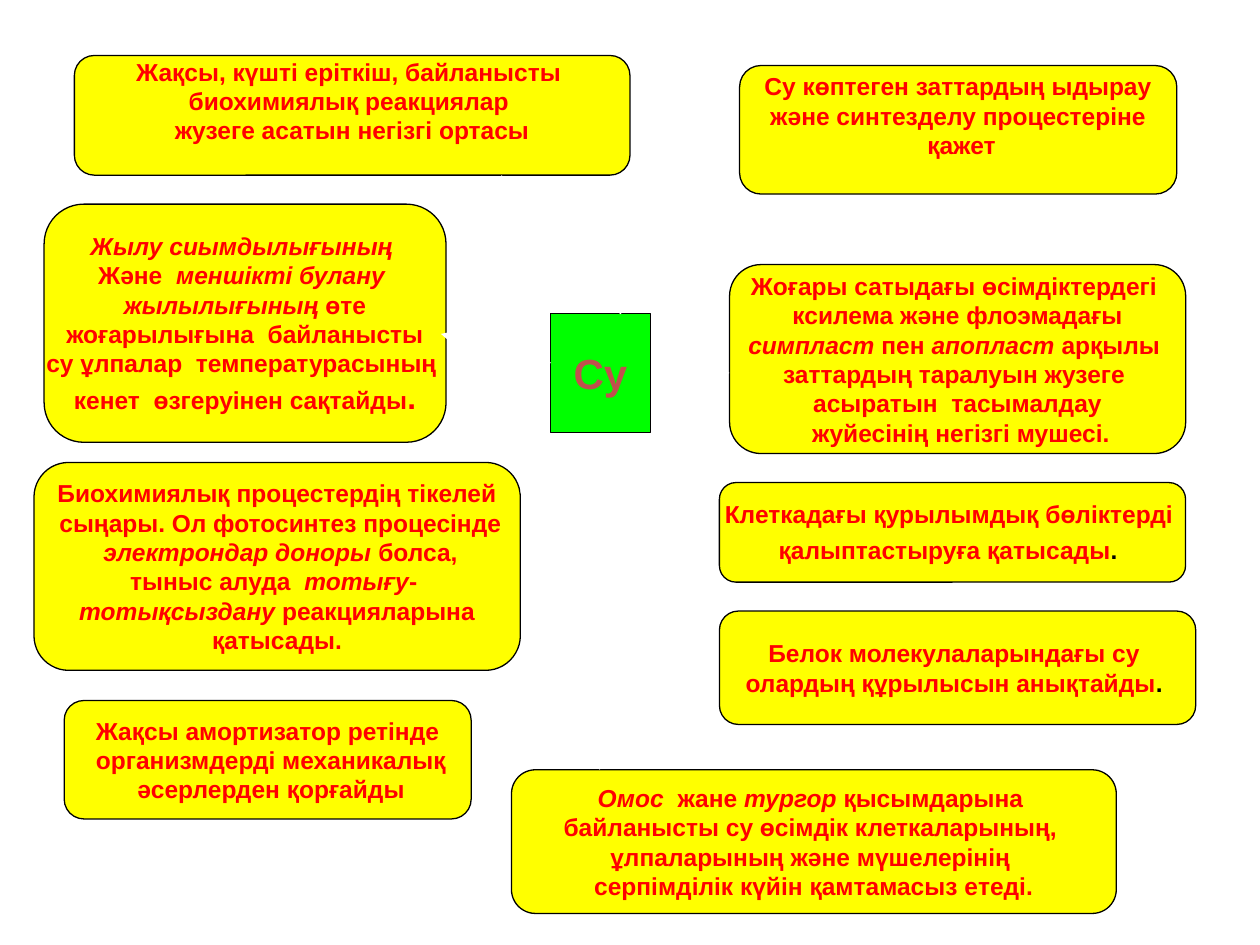
from lxml.etree import SubElement
from pptx import Presentation
from pptx.dml.color import RGBColor
from pptx.enum.shapes import MSO_CONNECTOR, MSO_SHAPE
from pptx.enum.text import MSO_ANCHOR, PP_ALIGN
from pptx.oxml.ns import qn
from pptx.util import Inches, Pt

COLORS = {"center": "00FF00", "center_text": "C0504D", "card": "FFFF00",
          "card_text": "FF0000", "outline": "000000", "arrow": "FFFFFF"}
FONT = "Arial"
STYLES = {
    "plain": {},
    "italic": {"italic": True},
    "large": {"size": 18},
    "black": {"color": "outline"},
    "spacer": {"color": "outline", "size": 18, "bold": False},
    "center": {"color": "center_text", "size": 24},
}
TEXT_LINE = 0.23

CENTER_BOX = (4.37, 2.49, 0.79, 0.94)
CARDS = [
    ((0.35, 1.62, 3.19, 1.89), [
        [("Жылу сиымдылығының ", "italic")],
        [("Және  ", "plain"), ("меншiктi булану ", "italic")],
        [("жылылығының", "italic"), (" өте", "plain")],
        [(" жоғарылығына  байланысты ", "plain")],
        [("су ұлпалар  температурасының \nкенет  өзгеруiнен сақтайды", "plain"),
         (".", "large")]], 0),
    ((5.79, 2.1, 3.62, 1.5), [
        [("Жоғары сатыдағы өсiмдiктердегi ", "plain")],
        [("ксилема және флоэмадағы", "plain")],
        [("сuмпласт ", "italic"), ("пен ", "plain"),
         ("апопласт ", "italic"), ("арқылы ", "plain")],
        [("заттардың таралуын жузеге ", "plain")],
        [("асыратын  тасымалдау", "plain")],
        [(" жуйесiнiң негiзгi мушесi.", "plain")]], 0),
    ((5.71, 3.83, 3.7, 0.79), [
        [("Клеткадағы қурылымдық бөлiктердi ", "plain")],
        [("қалыптастыруға қатысады", "plain"), (".", "black"), (" ", "spacer")]], 0),
    ((0.27, 3.67, 3.86, 1.65), [
        [("Биохимиялық процестердiң тiкелей", "plain")],
        [(" сыңары. Ол фотосинтез процесiнде", "plain")],
        [(" ", "plain"), ("электрондар доноры ", "italic"), ("болса,", "plain")],
        [("тыныс алуда  ", "plain"), ("тотығу", "italic"), ("- ", "plain")],
        [("тотықсыздану ", "italic"), ("реакцияларына", "plain")],
        [(" қатысады. ", "plain")]], 0),
    ((5.71, 4.85, 3.78, 0.9), [
        [("Белок молекулаларындағы су ", "plain")],
        [("олардың құрылысын анықтайды", "plain"), (". ", "black")]], 0),
    ((0.51, 5.56, 3.23, 0.94), [
        [("Жақсы амортизатор ретiнде", "plain")],
        [(" организмдердi механикалық", "plain")],
        [(" әсерлерден қорғайды", "plain")]], 0),
    ((4.06, 6.11, 4.8, 1.14), [
        [("Омос  ", "italic"), ("жане ", "plain"),
         ("тургор ", "italic"), ("қысымдарына ", "plain")],
        [("байланысты су өciмдiк клеткаларының, ", "plain")],
        [("ұлпаларының және мүшелерiнің ", "plain")],
        [("серпiмдiлiк күйiн қамтамасыз eтeдi.", "plain")]], 0),
    ((5.87, 0.52, 3.47, 1.02), [
        [("Су көптеген заттардың ыдырау", "plain")],
        [(" және синтезделу процестерiне ", "plain")],
        [(" қажет", "plain")]], TEXT_LINE),
    ((0.59, 0.44, 4.41, 0.95), [
        [("Жақсы, күштi ерiткiш, байланысты ", "plain")],
        [("биохимиялық реакциялар ", "plain")],
        [("жузеге асатын негiзгi ортасы", "plain")]], TEXT_LINE),
]
ARROWS = [
    ((4.37, 2.41), (3.98, 1.39)),
    ((4.92, 2.49), (5.94, 1.55)),
    ((5.24, 2.96), (5.79, 2.96)),
    ((4.37, 2.88), (3.5, 2.65)),
    ((4.45, 3.44), (4.13, 3.91)),
    ((5.24, 3.51), (5.71, 3.83)),
    ((4.76, 3.51), (4.76, 6.11)),
    ((4.69, 3.51), (3.82, 6.11)),
    ((4.84, 3.51), (5.71, 4.93)),
]


def color(name):
    """Return the named palette colour."""
    return RGBColor.from_string(COLORS[name])


def add_styled_run(paragraph, text, style_name):
    """Add text in a named style, with line breaks where the text has them."""
    style = STYLES[style_name]
    for index, part in enumerate(text.split("\n")):
        if index:
            paragraph.add_line_break()
        run = paragraph.add_run()
        run.text = part
        font = run.font
        font.name = FONT
        font.size = Pt(style.get("size", 14))
        font.bold = style.get("bold", True)
        font.italic = style.get("italic", False)
        font.color.rgb = color(style.get("color", "card_text"))


def add_box(slide, kind, box, fill, lines, space_below=0):
    """Draw an outlined shape with centred lines of styled runs."""
    shape = slide.shapes.add_shape(kind, *map(Inches, box))
    shape.shadow.inherit = False
    shape.fill.solid()
    shape.fill.fore_color.rgb = color(fill)
    shape.line.color.rgb = color("outline")
    shape.line.width = Pt(0.75)
    frame = shape.text_frame
    frame.word_wrap = False
    frame.vertical_anchor = MSO_ANCHOR.MIDDLE
    frame.margin_bottom = Inches(0.05 + space_below)
    for index, runs in enumerate(lines):
        paragraph = frame.add_paragraph() if index else frame.paragraphs[0]
        paragraph.alignment = PP_ALIGN.CENTER
        for text, style_name in runs:
            add_styled_run(paragraph, text, style_name)


def add_arrow(slide, start, end):
    """Draw a thin arrow from start to end."""
    arrow = slide.shapes.add_connector(
        MSO_CONNECTOR.STRAIGHT, *map(Inches, start + end))
    arrow.line.color.rgb = color("arrow")
    arrow.line.width = Pt(0.75)
    SubElement(arrow.line._get_or_add_ln(), qn("a:tailEnd"), type="triangle")
    SubElement(arrow._element.spPr, qn("a:effectLst"))


def build_water_map(slide):
    """Place the central word, the cards on the roles of water and the arrows."""
    add_box(slide, MSO_SHAPE.FLOWCHART_PROCESS, CENTER_BOX, "center",
            [[("Су", "center")]])
    for box, lines, space_below in CARDS:
        add_box(slide, MSO_SHAPE.FLOWCHART_ALTERNATE_PROCESS, box, "card",
                lines, space_below)
    for start, end in ARROWS:
        add_arrow(slide, start, end)


def main():
    """Build and save the presentation."""
    presentation = Presentation()
    presentation.slide_width = Inches(10)
    presentation.slide_height = Inches(7.5)
    build_water_map(presentation.slides.add_slide(presentation.slide_layouts[6]))
    presentation.save("out.pptx")


if __name__ == "__main__":
    main()
